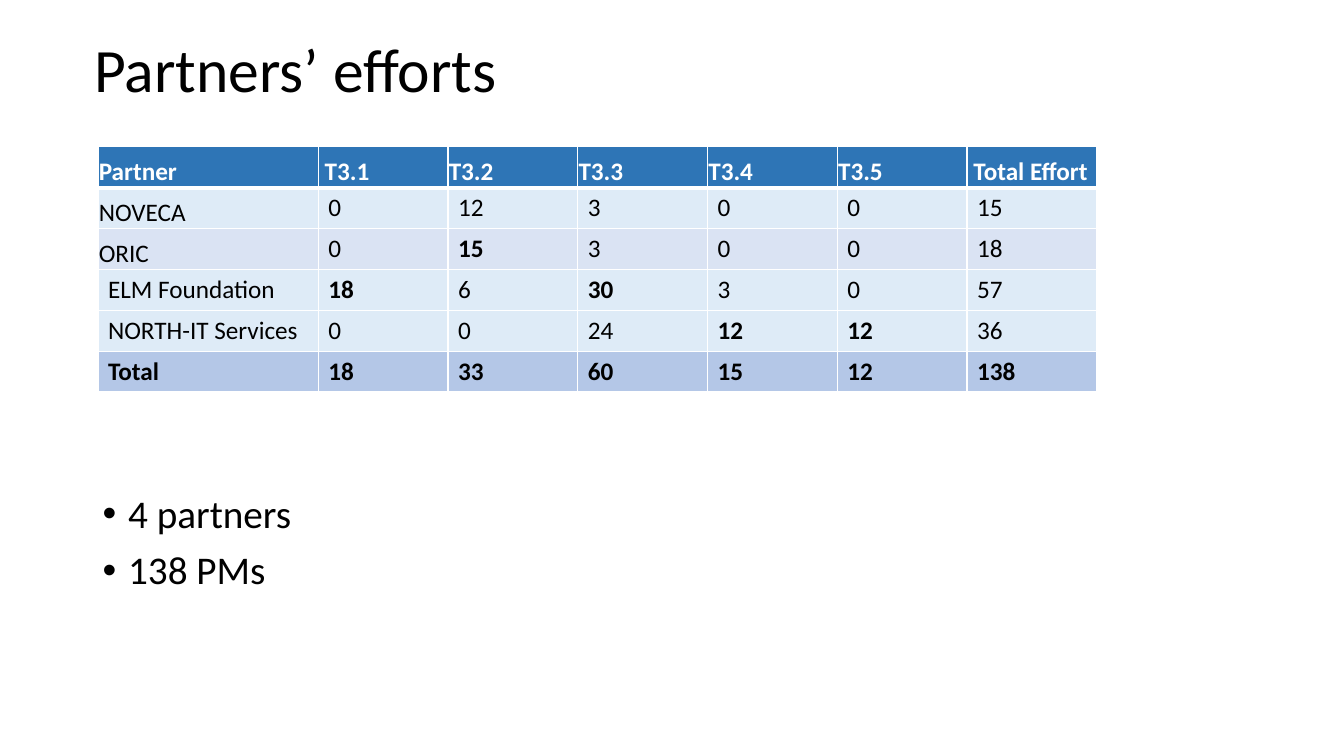
from lxml import etree
from pptx import Presentation
from pptx.dml.color import RGBColor
from pptx.enum.text import MSO_ANCHOR
from pptx.oxml.ns import qn
from pptx.util import Cm, Pt

MIDDLE, BOTTOM, TOP = MSO_ANCHOR.MIDDLE, MSO_ANCHOR.BOTTOM, MSO_ANCHOR.TOP
FONT = "Calibri"
COLORS = {
    "text": "000000",
    "white": "FFFFFF",
    "head": "2E75B6",
    "pale": "DEEBF7",
    "mist": "DAE3F3",
    "total": "B4C7E7",
}

# Row fill, then the cells of the row
ROWS = [
    ("head", ["Partner", " T3.1", "T3.2", "T3.3", "T3.4", "T3.5", " Total Effort"]),
    ("pale", ["NOVECA", "0", "12", "3", "0", "0", "15"]),
    ("mist", ["ORIC", "0", "15", "3", "0", "0", "18"]),
    ("pale", ["ELM Foundation", "18", "6", "30", "3", "0", "57"]),
    ("pale", ["NORTH-IT Services", "0", "0", "24", "12", "12", "36"]),
    ("total", ["Total", "18", "33", "60", "15", "12", "138"]),
]
LEADS = {(2, 2), (3, 1), (3, 3), (4, 4), (4, 5)}  # bold efforts (row, column)
WIDTHS = [5.55] + [3.27] * 6
HEIGHT = 1.03


def rgb(name):
    return RGBColor.from_string(COLORS[name])


def style(para, size, color="text", bold=False):
    for run in para.runs:
        font = run.font
        font.name, font.size, font.bold = FONT, Pt(size), bold
        font.color.rgb = rgb(color)


def add_text(slide, box, lines, size, anchor):
    frame = slide.shapes.add_textbox(*map(Cm, box)).text_frame
    frame.word_wrap = True
    frame.vertical_anchor = anchor
    frame.text = "\n".join(lines)
    for para in frame.paragraphs:
        para.line_spacing = 0.9
        style(para, size)
    return frame


def add_bullets(frame):
    for para in frame.paragraphs:
        para.space_before = Pt(10)
        props = para._p.get_or_add_pPr()
        props.set("marL", str(Cm(0.64)))
        props.set("indent", str(-Cm(0.64)))
        etree.SubElement(props, qn("a:buFont"), typeface="Arial")
        etree.SubElement(props, qn("a:buChar"), char="•")


def add_edges(cell, row):
    props = cell._tc.get_or_add_tcPr()
    widths = {"L": 1, "R": 1, "T": 3 if row == 1 else 1, "B": 3 if row == 0 else 1}
    for side, width in widths.items():
        line = etree.SubElement(props, qn(f"a:ln{side}"), w=str(Pt(width)))
        fill = etree.SubElement(line, qn("a:solidFill"))
        etree.SubElement(fill, qn("a:srgbClr"), val=COLORS["white"])


def fill_cell(cell, row, col, text, fill):
    add_edges(cell, row)
    cell.fill.solid()
    cell.fill.fore_color.rgb = rgb(fill)
    # The header and the first two partners sit low and tight
    if row == 0 or (col == 0 and row < 3):
        cell.vertical_anchor = BOTTOM
        cell.margin_left = cell.margin_right = cell.margin_top = Cm(0.02)
        cell.margin_bottom = 0
    cell.text_frame.text = text
    bold = fill in ("head", "total") or (row, col) in LEADS
    color = "white" if fill == "head" else "text"
    style(cell.text_frame.paragraphs[0], 18, color, bold)


def add_grid(slide, left, top):
    size = (left, top, sum(WIDTHS), HEIGHT * len(ROWS))
    table = slide.shapes.add_table(len(ROWS), len(WIDTHS), *map(Cm, size)).table
    for col, width in zip(table.columns, WIDTHS):
        col.width = Cm(width)
    for row, (fill, texts) in enumerate(ROWS):
        table.rows[row].height = Cm(HEIGHT)
        for col, text in enumerate(texts):
            fill_cell(table.cell(row, col), row, col, text, fill)


def main():
    deck = Presentation()
    deck.slide_width, deck.slide_height = Cm(33.87), Cm(19.05)
    slide = deck.slides.add_slide(deck.slide_layouts[6])

    # Title
    add_text(slide, (2.13, 0, 29.21, 3.68), ["Partners’ efforts"], 44, MIDDLE)
    # Effort table
    add_grid(slide, 2.47, 3.7)
    # Key figures
    figures = ["4 partners", "138 PMs"]
    add_bullets(add_text(slide, (2.34, 12.34, 29.21, 4.83), figures, 28, TOP))

    deck.save("out.pptx")


if __name__ == "__main__":
    main()
